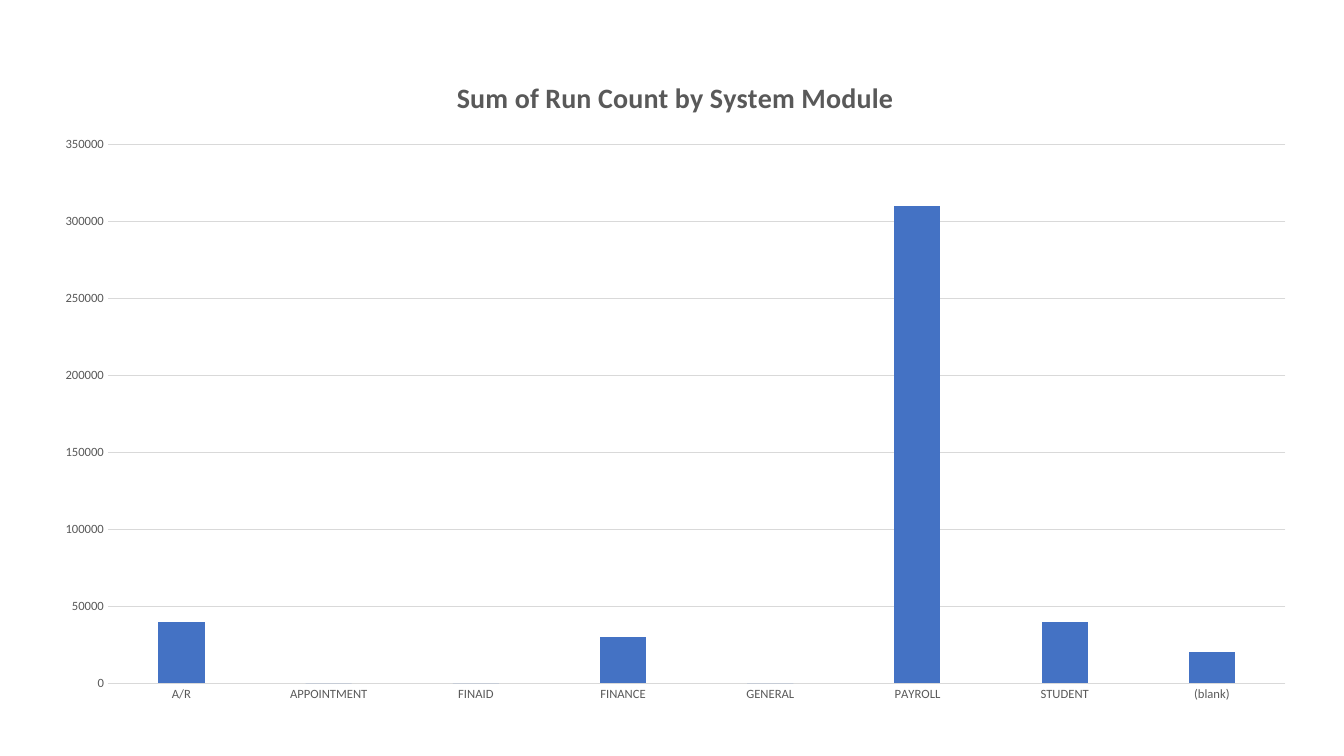
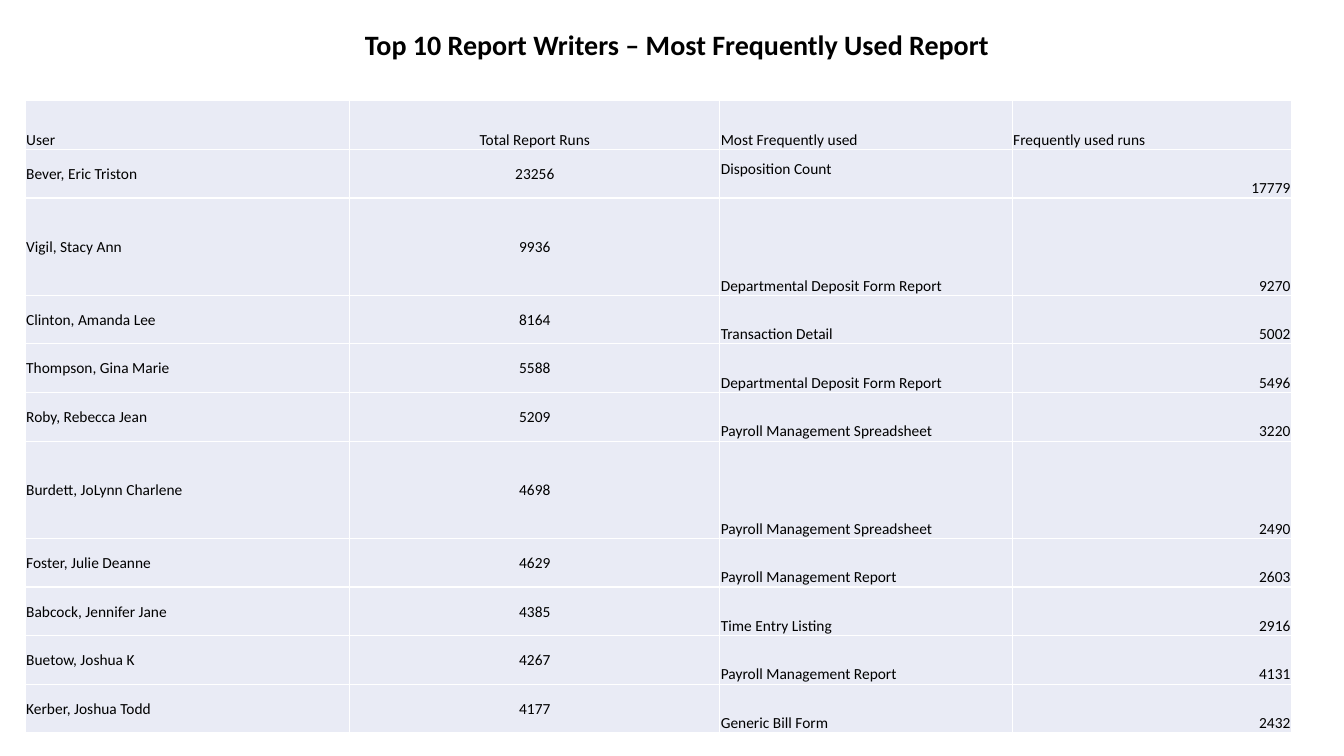
"""Build two slides on report usage: a column chart by module and a table of top writers."""
from dataclasses import dataclass

from lxml.etree import SubElement
from pptx import Presentation
from pptx.chart.data import CategoryChartData
from pptx.dml.color import RGBColor
from pptx.enum.chart import XL_CHART_TYPE, XL_TICK_MARK
from pptx.enum.text import MSO_ANCHOR, PP_ALIGN
from pptx.oxml import parse_xml
from pptx.oxml.ns import nsdecls, qn
from pptx.util import Inches, Pt


@dataclass(frozen=True)
class Theme:
    font: str = "Calibri"
    ink: RGBColor = RGBColor(0x00, 0x00, 0x00)
    muted: RGBColor = RGBColor(0x59, 0x59, 0x59)
    grid: RGBColor = RGBColor(0xD9, 0xD9, 0xD9)
    column: RGBColor = RGBColor(0x44, 0x72, 0xC4)
    cell: RGBColor = RGBColor(0xE9, 0xEB, 0xF5)
    border: str = "FFFFFF"
    title_size: Pt = Pt(20)
    chart_size: Pt = Pt(10)
    table_size: Pt = Pt(11)
    axis_size: Pt = Pt(9)


theme = Theme()
chart_width, chart_height = 12.6, 6.56


def style_font(font, size, color, bold=False):
    font.name = theme.font
    font.size = size
    font.bold = bold
    font.color.rgb = color


def place_chart_part(layout, left, top, width=None, height=None):
    for child in list(layout):
        layout.remove(child)
    manual = SubElement(layout, qn("c:manualLayout"))
    if width is not None:
        SubElement(manual, qn("c:layoutTarget"), val="inner")
    for tag in ("xMode", "yMode"):
        SubElement(manual, qn(f"c:{tag}"), val="edge")
    lengths = (("x", left, chart_width), ("y", top, chart_height),
               ("w", width, chart_width), ("h", height, chart_height))
    for tag, length, whole in lengths:
        if length is not None:
            SubElement(manual, qn(f"c:{tag}"), val=str(length / whole))


deck = Presentation()
deck.slide_width = Inches(13.33)
deck.slide_height = Inches(7.5)
title_only, blank = deck.slide_layouts[5], deck.slide_layouts[6]

run_counts = {
    "A/R": 40000,
    "APPOINTMENT": 0,
    "FINAID": 0,
    "FINANCE": 30000,
    "GENERAL": 0,
    "PAYROLL": 310000,
    "STUDENT": 40000,
    "(blank)": 20000,
}
chart_page = deck.slides.add_slide(blank)
chart_data = CategoryChartData()
chart_data.categories = list(run_counts)
chart_data.add_series("Series 1", list(run_counts.values()))
chart = chart_page.shapes.add_chart(
    XL_CHART_TYPE.COLUMN_CLUSTERED,
    Inches(0.4), Inches(0.53), Inches(chart_width), Inches(chart_height), chart_data,
).chart
style_font(chart.font, theme.chart_size, theme.ink)
chart.has_legend = False
chart.has_title = True
chart_title = chart.chart_title.text_frame
chart_title.text = "Sum of Run Count by System Module"
style_font(chart_title.paragraphs[0].runs[0].font, theme.title_size, theme.muted, bold=True)

plot = chart.plots[0]
plot.gap_width = 219
plot.overlap = -27
plot.vary_by_categories = False
columns = plot.series[0].format.fill
columns.solid()
columns.fore_color.rgb = theme.column

for axis in (chart.category_axis, chart.value_axis):
    axis.major_tick_mark = axis.minor_tick_mark = XL_TICK_MARK.NONE
    style_font(axis.tick_labels.font, theme.axis_size, theme.muted)
chart.value_axis.minimum_scale = 0
chart.value_axis.maximum_scale = 350000
chart.value_axis.major_unit = 50000
chart.value_axis.format.line.fill.background()
for line in (chart.category_axis.format.line, chart.value_axis.major_gridlines.format.line):
    line.color.rgb = theme.grid
    line.width = Pt(0.75)

plot_area = plot._element.getparent()
if plot_area.find(qn("c:layout")) is None:
    plot_area.insert(0, parse_xml(f"<c:layout {nsdecls('c')}/>"))
place_chart_part(plot_area.find(qn("c:layout")), 0.67, 0.9, 11.68, 5.35)
place_chart_part(chart.chart_title._element.find(qn("c:layout")), 4.08, 0.19)

table_page = deck.slides.add_slide(title_only)
title = table_page.shapes.title
title.left, title.top = Inches(3.52), Inches(0.22)
title.width, title.height = Inches(6.48), Inches(0.44)
title.text_frame.text = "Top 10 Report Writers – Most Frequently Used Report"
title.text_frame.paragraphs[0].alignment = PP_ALIGN.LEFT
style_font(title.text_frame.paragraphs[0].runs[0].font, theme.title_size, theme.ink, bold=True)

rows = [
    ("User", "Total Report Runs", "Most Frequently used", "Frequently used runs"),
    ("Bever, Eric Triston", "23256", "Disposition Count", "17779"),
    ("Vigil, Stacy Ann", "9936", "Departmental Deposit Form Report", "9270"),
    ("Clinton, Amanda Lee", "8164", "Transaction Detail", "5002"),
    ("Thompson, Gina Marie", "5588", "Departmental Deposit Form Report", "5496"),
    ("Roby, Rebecca Jean", "5209", "Payroll Management Spreadsheet", "3220"),
    ("Burdett, JoLynn Charlene", "4698", "Payroll Management Spreadsheet", "2490"),
    ("Foster, Julie Deanne", "4629", "Payroll Management Report", "2603"),
    ("Babcock, Jennifer Jane", "4385", "Time Entry Listing", "2916"),
    ("Buetow, Joshua K", "4267", "Payroll Management Report", "4131"),
    ("Kerber, Joshua Todd", "4177", "Generic Bill Form", "2432"),
]
column_widths = (3.22, 3.67, 2.9, 2.77)
alignments = (PP_ALIGN.LEFT, PP_ALIGN.CENTER, PP_ALIGN.LEFT, PP_ALIGN.RIGHT)
double_rows = (2, 6)
table_height = 6.27
row_height = table_height / (len(rows) + len(double_rows))

table = table_page.shapes.add_table(
    len(rows), len(column_widths),
    Inches(0.25), Inches(1), Inches(sum(column_widths)), Inches(table_height),
).table
table.first_row = table.horz_banding = False
for column, width in zip(table.columns, column_widths):
    column.width = Inches(width)

for row_index, row in enumerate(rows):
    table.rows[row_index].height = Inches(row_height * (2 if row_index in double_rows else 1))
    for column_index, text in enumerate(row):
        cell = table.cell(row_index, column_index)
        cell.text_frame.text = text
        para = cell.text_frame.paragraphs[0]
        para.alignment = alignments[column_index]
        if row_index == 0 and column_index == 3:
            para.alignment = PP_ALIGN.LEFT
        style_font(para.runs[0].font, theme.table_size, theme.ink)
        centred = row_index > 0 and column_index < 2
        cell.vertical_anchor = MSO_ANCHOR.MIDDLE if centred else MSO_ANCHOR.BOTTOM
        cell.margin_left = cell.margin_right = cell.margin_top = Inches(0.01)
        cell.margin_bottom = Inches(0.19 if text == "Disposition Count" else 0)
        cell.fill.solid()
        cell.fill.fore_color.rgb = theme.cell
        properties = cell._tc.get_or_add_tcPr()
        for position, side in enumerate(("lnL", "lnR", "lnT", "lnB")):
            properties.insert(position, parse_xml(
                f'<a:{side} {nsdecls("a")} w="{Pt(1)}"><a:solidFill>'
                f'<a:srgbClr val="{theme.border}"/></a:solidFill></a:{side}>'
            ))

deck.save("out.pptx")
